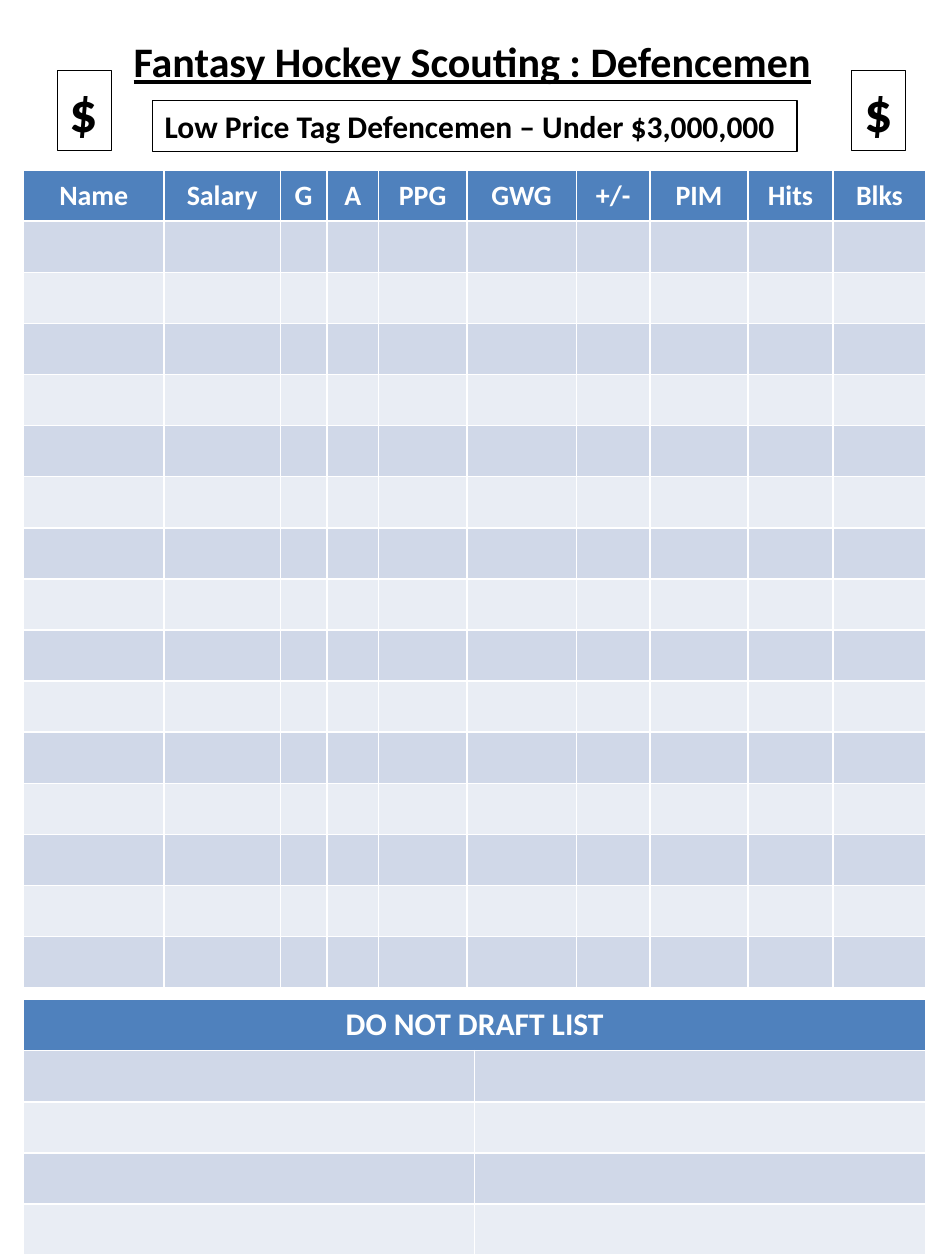
from pptx import Presentation
from pptx.dml.color import RGBColor
from pptx.enum import text
from pptx.util import Cm, Pt

BLACK = RGBColor(0x00, 0x00, 0x00)
WHITE = RGBColor(0xFF, 0xFF, 0xFF)
HEADER_BLUE = RGBColor(0x4F, 0x81, 0xBD)
BANDS = (RGBColor(0xD0, 0xD8, 0xE8), RGBColor(0xE9, 0xED, 0xF4))

FONT = "Calibri"
TABLE_LEFT = Cm(0.47)
ROW_HEIGHT = Cm(1.03)
STAT_COLUMNS = {
    "Name": 2.84, "Salary": 2.34, "G": 0.94, "A": 1.04, "PPG": 1.78,
    "GWG": 2.21, "+/-": 1.48, "PIM": 1.98, "Hits": 1.71, "Blks": 1.88,
}


def style_paragraph(paragraph, size, color, alignment=text.PP_ALIGN.LEFT):
    """Apply the sheet's bold typeface to a paragraph."""
    paragraph.alignment = alignment
    paragraph.font.name = FONT
    paragraph.font.size = Pt(size)
    paragraph.font.bold = True
    paragraph.font.color.rgb = color


def set_title(slide, title_text):
    """Fill and place the title, and drop the unused subtitle."""
    title = slide.shapes.title
    title.left, title.top, title.width, title.height = Cm(1.42), Cm(0.46), Cm(16.2), Cm(1.52)
    frame = title.text_frame
    frame.text = title_text
    frame.vertical_anchor = text.MSO_ANCHOR.MIDDLE
    style_paragraph(frame.paragraphs[0], 24, BLACK, text.PP_ALIGN.CENTER)
    frame.paragraphs[0].font.underline = True
    subtitle = slide.placeholders[1].element
    subtitle.getparent().remove(subtitle)


def add_outlined_box(slide, box_text, left, top, width, height, size):
    """Add a text box with a thin black outline."""
    box = slide.shapes.add_textbox(Cm(left), Cm(top), Cm(width), Cm(height))
    box.line.color.rgb = BLACK
    box.line.width = Pt(0.75)
    frame = box.text_frame
    frame.text = box_text
    frame.word_wrap = False
    frame.auto_size = text.MSO_AUTO_SIZE.SHAPE_TO_FIT_TEXT
    style_paragraph(frame.paragraphs[0], size, BLACK)


def add_blank_table(slide, top, widths, row_count):
    """Add a banded table with a blue header row."""
    frame = slide.shapes.add_table(
        row_count, len(widths), TABLE_LEFT, top, Cm(sum(widths)), ROW_HEIGHT * row_count)
    table = frame.table
    for column, width in zip(table.columns, widths):
        column.width = Cm(width)
    for index, row in enumerate(table.rows):
        row.height = ROW_HEIGHT
        for cell in row.cells:
            cell.fill.solid()
            cell.fill.fore_color.rgb = BANDS[(index - 1) % 2] if index else HEADER_BLUE
    return table


def set_header(cell, label, size, anchor):
    """Write a centred white header label."""
    cell.text = label
    cell.vertical_anchor = anchor
    style_paragraph(cell.text_frame.paragraphs[0], size, WHITE, text.PP_ALIGN.CENTER)


def main():
    """Build the scouting sheet."""
    presentation = Presentation()
    presentation.slide_width, presentation.slide_height = Cm(19.05), Cm(25.4)
    slide = presentation.slides.add_slide(presentation.slide_layouts[0])
    set_title(slide, "Fantasy Hockey Scouting : Defencemen")

    stats = add_blank_table(slide, Cm(3.43), list(STAT_COLUMNS.values()), 16)
    for cell, label in zip(stats.rows[0].cells, STAT_COLUMNS):
        set_header(cell, label, 16, text.MSO_ANCHOR.MIDDLE)

    add_outlined_box(slide, "Low Price Tag Defencemen – Under $3,000,000",
                     3.07, 2.03, 13, 1.03, 18)

    avoid = add_blank_table(slide, Cm(20.15), [9.1, 9.1], 5)
    avoid.cell(0, 0).merge(avoid.cell(0, 1))
    set_header(avoid.cell(0, 0), "DO NOT DRAFT LIST", 18, text.MSO_ANCHOR.TOP)

    for left in (17.17, 1.16):
        add_outlined_box(slide, "$", left, 1.42, 1.09, 1.62, 32)

    presentation.save("out.pptx")


if __name__ == "__main__":
    main()
